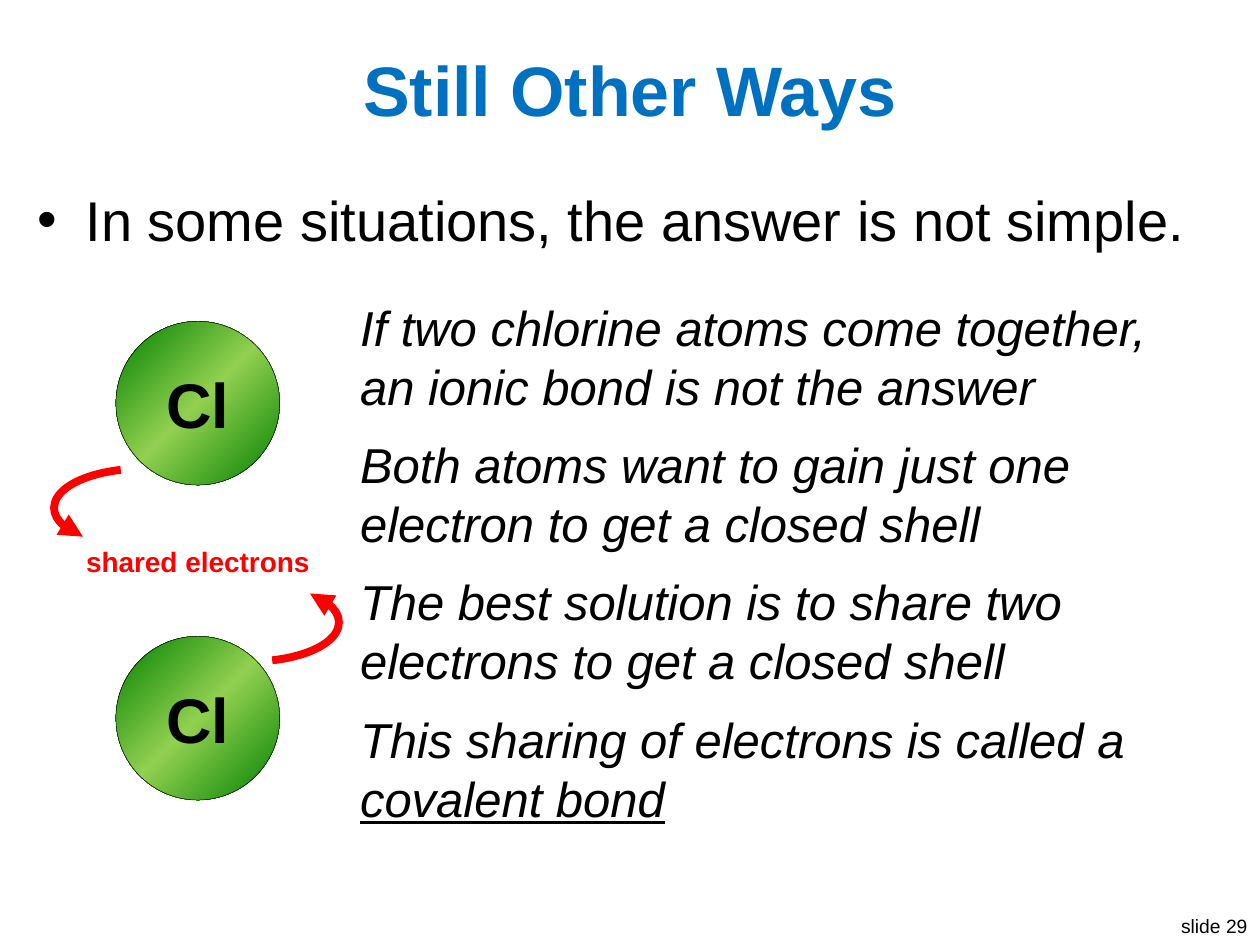
from lxml.etree import SubElement
from pptx import Presentation
from pptx.dml.color import RGBColor
from pptx.enum.shapes import MSO_SHAPE as Preset
from pptx.enum.text import MSO_ANCHOR as Anchor, MSO_AUTO_SIZE as AutoSize, PP_ALIGN as Align
from pptx.oxml import parse_xml
from pptx.oxml.ns import nsdecls, qn
from pptx.util import Inches, Pt

# Content
TITLE = "Still Other Ways"
BULLET = "In some situations, the answer is not simple."
STATEMENTS = [
    ["If two chlorine atoms come together, an ionic bond is not the answer"],
    ["Both atoms want to gain just one electron to get a closed shell"],
    ["The best solution is to share two electrons to get a closed shell"],
    ["This sharing of electrons is called a ", "covalent bond"],  # second part underlined
]
ATOM_TOPS = [2.55, 5.05]
ATOM_STOPS = [(0, "008000"), (50, "92D050"), (100, "008000")]
ARROWS = [(0.43, 3.72, "flipH"), (1.29, 4.63, "flipV")]
ARC_ANGLES = [299.55, 26.02]
BLACK, BLUE, RED = "000000", "0070C0", "FF0000"


def color(hex_string):
    return RGBColor.from_string(hex_string)


def place(shape, left, top, width, height):
    shape.left, shape.top = Inches(left), Inches(top)
    shape.width, shape.height = Inches(width), Inches(height)


def format_text(shape, size, hex_string=BLACK, align=Align.LEFT, bold=False, italic=False):
    for paragraph in shape.text_frame.paragraphs:
        paragraph.alignment = align
        for run in paragraph.runs:
            font = run.font
            font.name, font.size = "Arial", Pt(size)
            font.bold, font.italic = bold, italic
            font.color.rgb = color(hex_string)


def add_text(slide, box, parts, wrap=True):
    shape = slide.shapes.add_textbox(*map(Inches, box))
    shape.text_frame.word_wrap = wrap
    for part in parts:
        shape.text_frame.paragraphs[0].add_run().text = part
    return shape


def add_outlined(slide, preset, box, line_color, line_width):
    shape = slide.shapes.add_shape(preset, *map(Inches, box))
    shape.shadow.inherit = False
    shape.line.color.rgb = color(line_color)
    shape.line.width = Pt(line_width)
    return shape


def add_atom(slide, top):
    atom = add_outlined(slide, Preset.OVAL, (0.92, top, 1.3, 1.3), BLACK, 0.25)
    stops = "".join(
        f'<a:gs pos="{position * 1000}"><a:srgbClr val="{hex_string}"/></a:gs>'
        for position, hex_string in ATOM_STOPS
    )
    gradient = parse_xml(
        f'<a:gradFill {nsdecls("a")}><a:gsLst>{stops}</a:gsLst>'
        '<a:lin ang="2700000" scaled="0"/></a:gradFill>'
    )
    atom._element.spPr.find(qn("a:prstGeom")).addnext(gradient)
    frame = atom.text_frame
    frame.text = "Cl"
    frame.vertical_anchor = Anchor.MIDDLE
    frame.margin_left = frame.margin_right = frame.margin_top = frame.margin_bottom = 0
    format_text(atom, 36, align=Align.CENTER, bold=True)


def add_curved_arrow(slide, left, top, flip):
    arrow = add_outlined(slide, Preset.ARC, (left, top, 1.4, 0.62), RED, 4.5)
    arrow.fill.background()
    for index, angle in enumerate(ARC_ANGLES):
        arrow.adjustments[index] = angle * 0.6  # 60000 units per degree, scaled by 100000
    properties = arrow._element.spPr
    properties.find(qn("a:xfrm")).set(flip, "1")
    SubElement(properties.find(qn("a:ln")), qn("a:tailEnd"), type="triangle")


def main():
    presentation = Presentation()
    presentation.slide_width, presentation.slide_height = Inches(10), Inches(7.5)
    slide = presentation.slides.add_slide(presentation.slide_layouts[1])

    # Title and bullet
    title, body = slide.placeholders
    place(title, 0.2, 0.3, 9.6, 0.8)
    title.text_frame.text = TITLE
    title.text_frame.vertical_anchor = Anchor.MIDDLE
    format_text(title, 40, BLUE, Align.CENTER, bold=True)

    place(body, 0.2, 1.42, 9.6, 0.64)
    body.text_frame.text = BULLET
    body.text_frame.auto_size = AutoSize.NONE
    format_text(body, 32)
    paragraph = body.text_frame.paragraphs[0]
    paragraph.space_before = Pt(12)
    bullet_properties = paragraph._p.get_or_add_pPr()
    bullet_properties.set("marL", str(Inches(0.38)))
    bullet_properties.set("indent", str(-Inches(0.38)))
    SubElement(bullet_properties, qn("a:buChar"), char="•")

    # Statements
    for index, parts in enumerate(STATEMENTS):
        statement = add_text(slide, (2.76, 2.31 + 1.09 * index, 6.6, 1.04), parts)
        format_text(statement, 28, italic=True)
        paragraph = statement.text_frame.paragraphs[0]
        paragraph.space_before = Pt(12)
        for run in paragraph.runs[1:]:
            run.font.underline = True

    # Atoms sharing electrons
    for top in ATOM_TOPS:
        add_atom(slide, top)
    label = add_text(slide, (0.47, 4.27, 2.2, 0.37), ["shared electrons"])
    format_text(label, 16, RED, Align.CENTER, bold=True)
    for arrow in ARROWS:
        add_curved_arrow(slide, *arrow)

    # Slide number
    number = add_text(slide, (9.25, 7.21, 0.75, 0.29), ["slide 29"], wrap=False)
    format_text(number, 11, align=Align.RIGHT)

    presentation.save("out.pptx")


if __name__ == "__main__":
    main()
